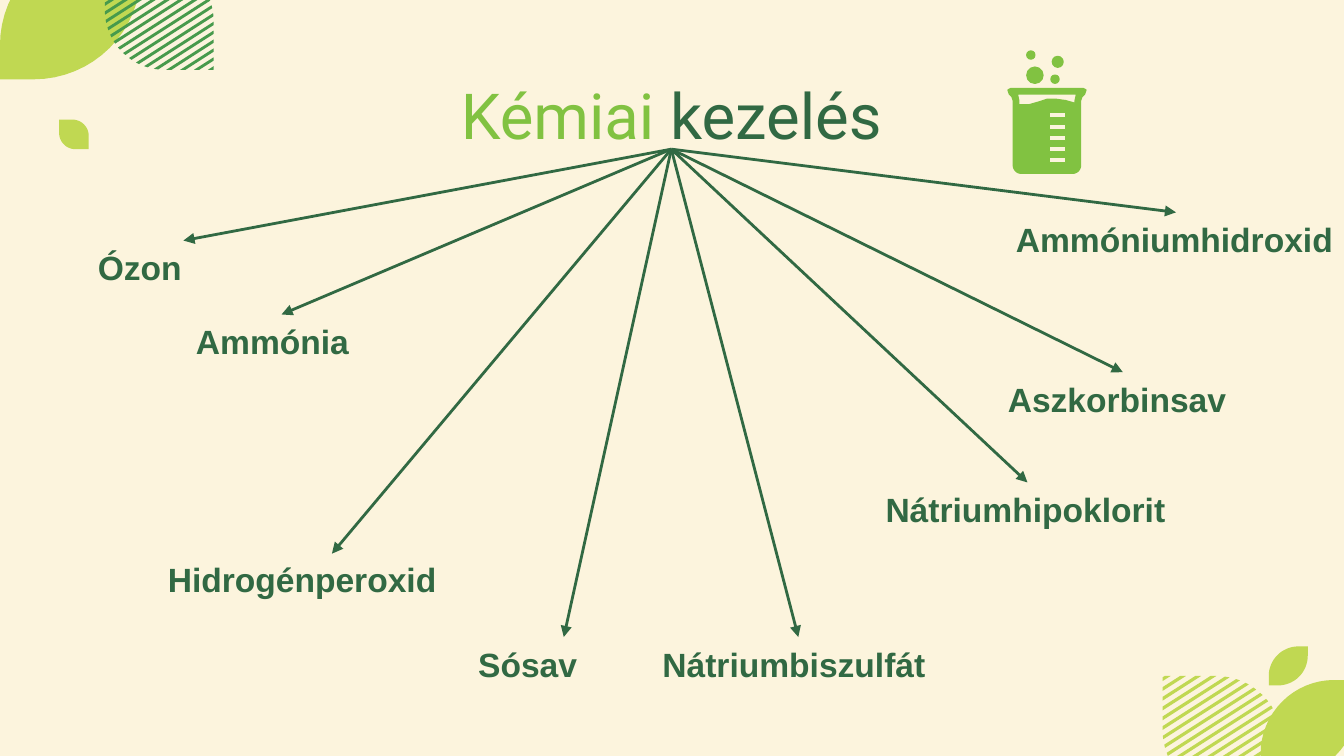
import math
from dataclasses import dataclass

import pptx
import pptx.dml.color
import pptx.enum.shapes
import pptx.enum.text
import pptx.oxml.ns
import pptx.util
from lxml import etree

Inches = pptx.util.Inches
SLIDE_W = 10
SLIDE_H = SLIDE_W * 9 / 16


@dataclass(frozen=True)
class Theme:
    cream: str = "FCF4DD"
    lime: str = "C0D852"
    leaf_green: str = "479A4C"
    bright_green: str = "81C241"
    dark_green: str = "316943"
    title_font: str = "Roboto"
    label_font: str = "Arial"
    title_size: int = 34
    label_size: int = 18
    arrow_width: float = 1.5
    icon_line: float = 0.75


THEME = Theme()

# Substance labels: text, left, top, width
SUBSTANCES = [
    ("Ózon", 0.63, 1.79, 1.47),
    ("Ammónia", 1.36, 2.34, 1.47),
    ("Hidrogénperoxid", 1.15, 4.11, 2.31),
    ("Sósav", 3.46, 4.74, 1.47),
    ("Nátriumbiszulfát", 4.83, 4.74, 2.22),
    ("Nátriumhipoklorit", 6.49, 3.59, 2.31),
    ("Aszkorbinsav", 7.4, 2.77, 1.91),
    ("Ammóniumhidroxid", 7.46, 1.58, 2.58),
]
# Arrow tips that rest beside the middle of their label
FREE_TIPS = {"Hidrogénperoxid": (2.47, 4.12)}


def rgb(value):
    return pptx.dml.color.RGBColor.from_string(value)


def paint(shape, color, line_width=None):
    shape.shadow.inherit = False
    shape.fill.solid()
    shape.fill.fore_color.rgb = rgb(color)
    if line_width is None:
        shape.line.fill.background()
    else:
        shape.line.color.rgb = rgb(color)
        shape.line.width = pptx.util.Pt(line_width)


def style_run(run, font, size, color, bold=False):
    run.font.name = font
    run.font.size = pptx.util.Pt(size)
    run.font.bold = bold
    run.font.color.rgb = rgb(color)


def draw_outline(shapes, contours, left, top, color, scale=1, line_width=None):
    """Fill closed contours whose points are relative to left, top."""
    placed = [[(Inches(left + x * scale), Inches(top + y * scale)) for x, y in contour]
              for contour in contours]
    builder = shapes.build_freeform(*placed[0][0])
    builder.add_line_segments(placed[0][1:], close=True)
    for contour in placed[1:]:
        builder.move_to(*contour[0])
        builder.add_line_segments(contour[1:], close=True)
    paint(builder.convert_to_shape(), color, line_width)


# Leaves
def arc(cx, cy, radius, start, steps=16):
    """Quarter turn, clockwise on the slide, from start degrees."""
    angles = [math.radians(start + 90 * i / steps) for i in range(steps + 1)]
    return [(cx + radius * math.cos(a), cy + radius * math.sin(a)) for a in angles]


def leaf_outline(radius, leans_right):
    """Unit square with two opposite corners rounded."""
    far = 1 - radius
    if leans_right:
        return arc(radius, radius, radius, 180) + [(1, 0)] + arc(far, far, radius, 0) + [(0, 1)]
    return [(0, 0)] + arc(far, radius, radius, 270) + [(1, 1)] + arc(radius, far, radius, 90)


FULL_LEAF = leaf_outline(0.76, True)
BLUNT_LEAF = leaf_outline(0.55, False)


def clip(points, depth, sign):
    """Keep the part of a polygon on one side of a stripe edge."""
    slope = 0.64
    kept = []
    for (x0, y0), (x1, y1) in zip(points, points[1:] + points[:1]):
        d0 = sign * (y0 + slope * x0 - depth)
        d1 = sign * (y1 + slope * x1 - depth)
        if d0 >= 0:
            kept.append((x0, y0))
        if d0 * d1 < 0:
            t = d0 / (d0 - d1)
            kept.append((x0 + t * (x1 - x0), y0 + t * (y1 - y0)))
    return kept


def striped_leaf(slide, left, top, size, color, first):
    """Leaf of 20 slanted stripes; only those that reach the slide are drawn."""
    pitch, thickness = 0.0816, 0.0315
    group = slide.shapes.add_group_shape()
    for index in range(20):
        depth = first + index * pitch
        stripe = clip(clip(BLUNT_LEAF, depth, 1), depth + thickness, -1)
        heights = [top + size * y for _, y in stripe]
        if heights and max(heights) > 0 and min(heights) < SLIDE_H:
            draw_outline(group.shapes, [stripe], left, top, color, size)


def leaf_corners(slide):
    # Bottom right
    draw_outline(slide.shapes, [FULL_LEAF], 9.38, 5.06, THEME.lime, 0.72)
    striped_leaf(slide, 8.65, 5.03, 0.89, THEME.lime, 0.012)
    draw_outline(slide.shapes, [FULL_LEAF], 9.44, 4.81, THEME.lime, 0.29)
    # Top left
    draw_outline(slide.shapes, [FULL_LEAF], 0, -0.46, THEME.lime, 1.05)
    striped_leaf(slide, 0.78, -0.29, 0.81, THEME.leaf_green, 0.055)
    draw_outline(slide.shapes, [BLUNT_LEAF], 0.44, 0.89, THEME.lime, 0.22)


# Title
def heading(slide, left, top, width, height):
    title = slide.shapes.title
    title.left, title.top = Inches(left), Inches(top)
    title.width, title.height = Inches(width), Inches(height)
    frame = title.text_frame
    frame.auto_size = pptx.enum.text.MSO_AUTO_SIZE.NONE
    frame.vertical_anchor = pptx.enum.text.MSO_ANCHOR.MIDDLE
    frame.margin_left = frame.margin_right = Inches(0.1)
    frame.margin_top = frame.margin_bottom = Inches(0.1)
    line = frame.paragraphs[0]
    line.alignment = pptx.enum.text.PP_ALIGN.CENTER
    for word, color in (("Kémiai ", THEME.bright_green), ("kezelés", THEME.dark_green)):
        run = line.add_run()
        run.text = word
        style_run(run, THEME.title_font, THEME.title_size, color)
    return title


# Substances with their arrows
def substance(slide, text, left, top, width):
    label = slide.shapes.add_textbox(Inches(left), Inches(top), Inches(width), Inches(0.4))
    label.text_frame.word_wrap = True
    label.text_frame.text = text
    style_run(label.text_frame.paragraphs[0].runs[0], THEME.label_font,
              THEME.label_size, THEME.dark_green, bold=True)
    return label


def arrow(slide, source, target):
    tip_x, tip_y = FREE_TIPS.get(target.text_frame.text, (0, 0))
    connector = slide.shapes.add_connector(pptx.enum.shapes.MSO_CONNECTOR.STRAIGHT, 0, 0,
                                           Inches(tip_x), Inches(tip_y))
    connector.begin_connect(source, 2)
    if target.text_frame.text not in FREE_TIPS:
        connector.end_connect(target, 0)
    connector.line.color.rgb = rgb(THEME.dark_green)
    connector.line.width = pptx.util.Pt(THEME.arrow_width)
    qn = pptx.oxml.ns.qn
    etree.SubElement(connector.line._get_or_add_ln(), qn("a:tailEnd"), type="triangle")
    etree.SubElement(connector._element.spPr, qn("a:effectLst"))


# Beaker icon
def beaker(slide, left, top):
    shapes = slide.shapes.add_group_shape().shapes
    for x, y, size in ((0.14, 0.12, 0.12), (0.14, 0, 0.06), (0.32, 0.18, 0.06), (0.33, 0.04, 0.08)):
        bubble = shapes.add_shape(pptx.enum.shapes.MSO_SHAPE.OVAL, Inches(left + x),
                                  Inches(top + y), Inches(size), Inches(size))
        paint(bubble, THEME.bright_green, THEME.icon_line)
    glass = ([(0, 0.01), (0.02, 0), (0.56, 0), (0.58, 0.01), (0.57, 0.04), (0.55, 0.06), (0.54, 0.09)]
             + arc(0.48, 0.57, 0.06, 0) + arc(0.1, 0.57, 0.06, 90)
             + [(0.04, 0.09), (0.03, 0.06), (0.01, 0.04)])
    air = [(0.5, 0.09), (0.5, 0.11), (0.43, 0.09), (0.36, 0.08), (0.29, 0.08), (0.23, 0.1),
           (0.16, 0.12), (0.08, 0.12), (0.08, 0.09), (0.07, 0.04), (0.51, 0.04)]
    ticks = [[(0.31, y), (0.43, y), (0.43, y + 0.04), (0.31, y + 0.04)]
             for y in (0.18 + 0.0825 * i for i in range(5))]
    draw_outline(shapes, [glass, air] + ticks, left, top + 0.28, THEME.bright_green,
                 line_width=THEME.icon_line)


def main():
    deck = pptx.Presentation()
    deck.slide_width, deck.slide_height = Inches(SLIDE_W), Inches(SLIDE_H)
    slide = deck.slides.add_slide(deck.slide_layouts[5])
    slide.background.fill.solid()
    slide.background.fill.fore_color.rgb = rgb(THEME.cream)
    leaf_corners(slide)
    title = heading(slide, 0.78, 0.59, 8.43, 0.52)
    labels = [substance(slide, *entry) for entry in SUBSTANCES]
    for label in labels:
        arrow(slide, title, label)
    beaker(slide, 7.5, 0.38)
    deck.save("out.pptx")


if __name__ == "__main__":
    main()
